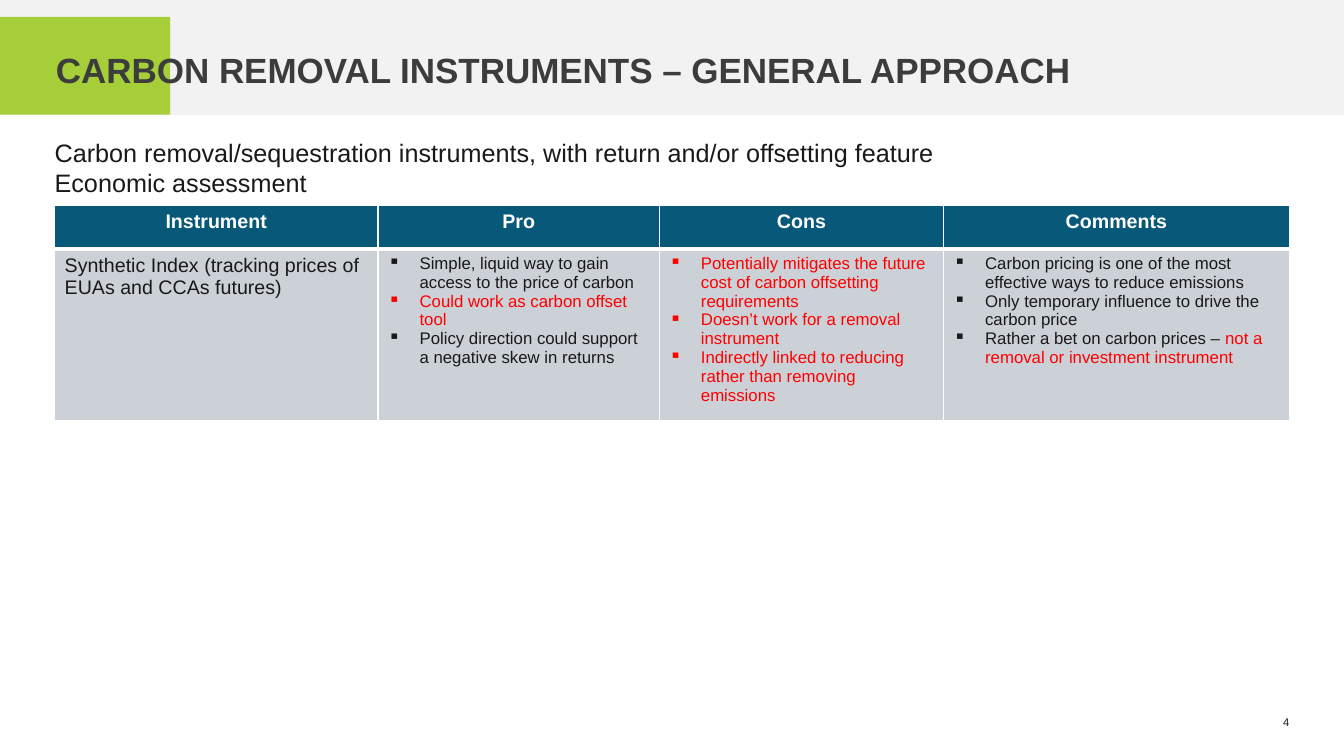
from dataclasses import dataclass

from pptx import Presentation
from pptx.dml.color import RGBColor as RGB
from pptx.enum.shapes import MSO_SHAPE as SHAPE
from pptx.enum.text import MSO_ANCHOR as ANCHOR, PP_ALIGN as ALIGN
from pptx.oxml.xmlchemy import OxmlElement as Element
from pptx.util import Pt


@dataclass(frozen=True)
class Theme:
    font: str = "Arial"
    band: str = "F2F2F2"
    accent: str = "A6CE39"
    title: str = "3C3C3C"
    ink: str = "191919"
    alert: str = "FF0000"
    header: str = "085879"
    body: str = "CCD1D7"
    white: str = "FFFFFF"
    title_size: int = 25
    lead_size: int = 18
    cell_size: int = 14
    bullet_size: int = 12
    number_size: int = 8


class Deck:
    def __init__(self, theme):
        self.theme = theme
        self.prs = Presentation()
        self.prs.slide_width, self.prs.slide_height = Pt(960), Pt(540)
        self.s = self.prs.slides.add_slide(self.prs.slide_layouts[6])

    def rect(self, x, y, w, h, color):
        sp = self.s.shapes.add_shape(SHAPE.RECTANGLE, Pt(x), Pt(y), Pt(w), Pt(h))
        sp.shadow.inherit = False
        sp.fill.solid()
        sp.fill.fore_color.rgb = RGB.from_string(color)
        sp.line.fill.background()

    def style(self, font, size, color, bold=False):
        font.name, font.size, font.bold = self.theme.font, Pt(size), bold
        font.color.rgb = RGB.from_string(color)

    def text(self, x, y, w, h, lines, size, color, bold=False,
             align=ALIGN.LEFT, anchor=ANCHOR.TOP, inset=0):
        tf = self.s.shapes.add_textbox(Pt(x), Pt(y), Pt(w), Pt(h)).text_frame
        tf.word_wrap, tf.vertical_anchor = True, anchor
        tf.margin_left = tf.margin_right = Pt(inset)
        tf.margin_top = tf.margin_bottom = Pt(inset)
        tf.text = "\n".join(lines)
        for p in tf.paragraphs:
            p.alignment = align
            self.style(p.font, size, color, bold)

    def border(self, cell, side, width):
        ln = Element(f"a:ln{side}")
        ln.set("w", str(Pt(width)))
        fill, color = Element("a:solidFill"), Element("a:srgbClr")
        color.set("val", self.theme.white)
        fill.append(color)
        ln.append(fill)
        cell._tc.get_or_add_tcPr().append(ln)

    def cell(self, cell, fill, top=1, bottom=1):
        for side, width in zip("LRTB", (1, 1, top, bottom)):
            self.border(cell, side, width)
        cell.fill.solid()
        cell.fill.fore_color.rgb = RGB.from_string(fill)
        return cell.text_frame

    def bullets(self, tf, items):
        for i, runs in enumerate(items):
            p = tf.add_paragraph() if i else tf.paragraphs[0]
            self.style(p.font, self.theme.bullet_size, runs[0][1])
            pPr = p._p.get_or_add_pPr()
            pPr.set("marL", str(Pt(22.5)))
            pPr.set("indent", str(Pt(-22.5)))
            bu = Element("a:buChar")
            bu.set("char", "▪")
            pPr.insert_element_before(bu, "a:tabLst", "a:defRPr", "a:extLst")
            for text, color in runs:
                r = p.add_run()
                r.text = text
                self.style(r.font, self.theme.bullet_size, color)

    def table(self, x, y, widths, heights, headers, label, lists):
        t = self.theme
        tbl = self.s.shapes.add_table(
            len(heights), len(widths), Pt(x), Pt(y), Pt(sum(widths)), Pt(sum(heights))).table
        tbl.horz_banding = False
        for col, width in zip(tbl.columns, widths):
            col.width = Pt(width)
        for row, height in zip(tbl.rows, heights):
            row.height = Pt(height)
        for i, header in enumerate(headers):
            tf = self.cell(tbl.cell(0, i), t.header, bottom=3)
            tf.text = header
            p = tf.paragraphs[0]
            p.alignment = ALIGN.CENTER
            self.style(p.font, t.cell_size, t.white, True)
        tf = self.cell(tbl.cell(1, 0), t.body, top=3)
        tf.text = label
        self.style(tf.paragraphs[0].font, t.cell_size, t.ink)
        for i, items in enumerate(lists, 1):
            self.bullets(self.cell(tbl.cell(1, i), t.body, top=3), items)


def main():
    t = Theme()
    deck = Deck(t)
    deck.rect(0, 0, 960, 82, t.band)
    deck.rect(0, 12, 121.5, 70, t.accent)
    deck.text(880.5, 511, 40.5, 29, ["4"], t.number_size, t.ink, align=ALIGN.RIGHT)
    deck.text(40, 28, 840, 43, ["CARBON REMOVAL INSTRUMENTS – GENERAL APPROACH"],
              t.title_size, t.title, bold=True, anchor=ANCHOR.MIDDLE)

    pros = [
        [("Simple, liquid way to gain access to the price of carbon", t.ink)],
        [("Could work as carbon offset tool", t.alert)],
        [("Policy direction could support a negative skew in returns", t.ink)],
    ]
    cons = [
        [("Potentially mitigates the future cost of carbon offsetting requirements", t.alert)],
        [("Doesn’t work for a removal instrument", t.alert)],
        [("Indirectly linked to reducing rather than removing emissions", t.alert)],
    ]
    comments = [
        [("Carbon pricing is one of the most effective ways to reduce emissions", t.ink)],
        [("Only temporary influence to drive the carbon price", t.ink)],
        [("Rather a bet on carbon prices – ", t.ink),
         ("not a removal or investment instrument", t.alert)],
    ]
    deck.table(39, 147, (231, 201, 203, 247), (31, 114),
               ("Instrument", "Pro", "Cons", "Comments"),
               "Synthetic Index (tracking prices of EUAs and CCAs futures)",
               (pros, cons, comments))
    deck.text(33, 92, 741, 55,
              ["Carbon removal/sequestration instruments, with return and/or offsetting feature",
               "Economic assessment"], t.lead_size, t.ink, inset=6)
    deck.prs.save("out.pptx")


if __name__ == "__main__":
    main()
